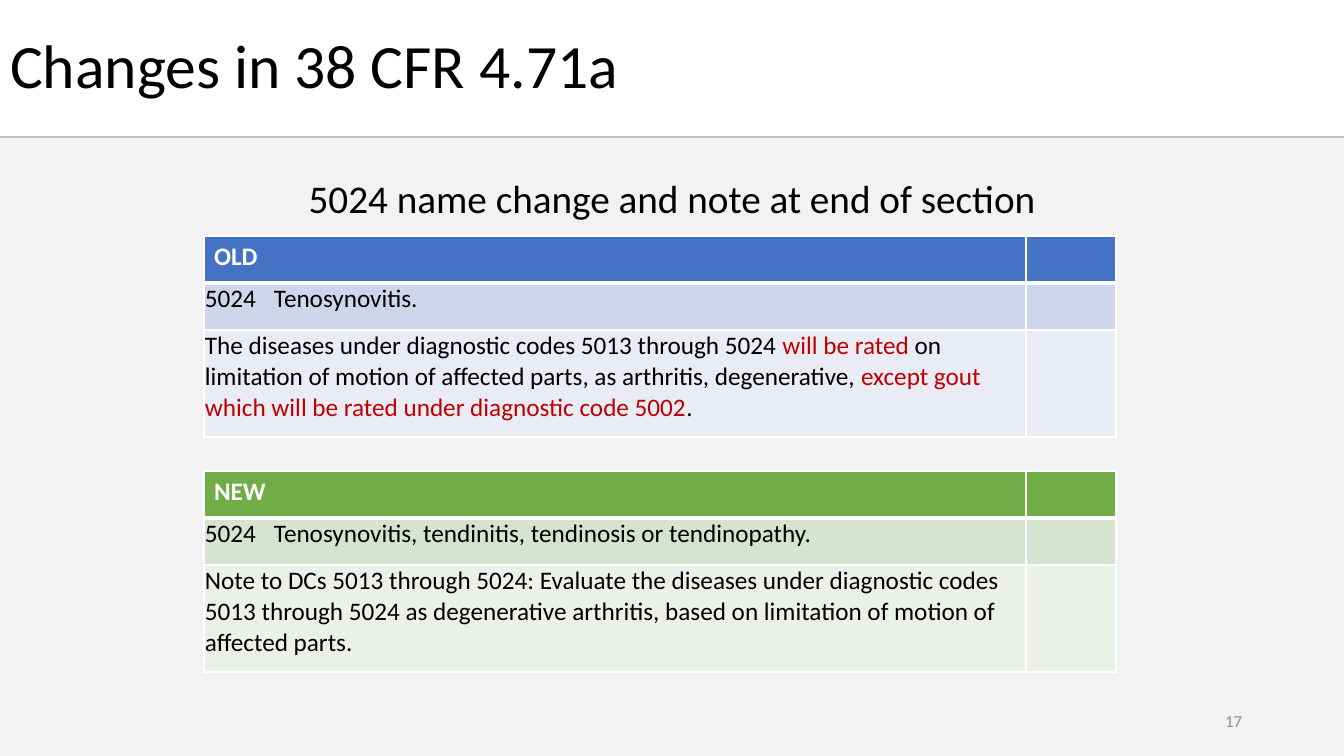
"""Build the slide on the 38 CFR 4.71a changes."""
from lxml import etree
from pptx import Presentation
from pptx import util as u
from pptx.dml.color import RGBColor
from pptx.enum import shapes, text
from pptx.oxml.ns import qn

FONT = "Calibri"
HUES = {
    "black": "000000", "white": "FFFFFF", "red": "C00000",
    "page": "F2F2F2", "rule": "BFBFBF", "grey": "8C8C8C",
    "blue": "4472C4", "blue mid": "CFD5EA", "blue pale": "E9EBF5",
    "green": "70AD47", "green mid": "D5E3CF", "green pale": "EBF1E9",
}
TITLE = "Changes in 38 CFR 4.71a"
LEAD = "5024 name change and note at end of section"
NUMBER = "17"
TABLES = [
    (236, ("blue", "blue mid", "blue pale"), [
        [("OLD", "white")],
        [("5024\tTenosynovitis.", "black")],
        [("The diseases under diagnostic codes 5013 through 5024 ", "black"),
         ("will be rated ", "red"),
         ("on limitation of motion of affected parts, as arthritis, degenerative,", "black"),
         (" except gout which will be rated under diagnostic code 5002", "red"),
         (".", "black")],
    ]),
    (471, ("green", "green mid", "green pale"), [
        [("NEW", "white")],
        [("5024\tTenosynovitis, tendinitis, tendinosis or tendinopathy.", "black")],
        [("Note to DCs 5013 through 5024: Evaluate the diseases under diagnostic codes "
          "5013 through 5024 as degenerative arthritis, based on limitation of motion "
          "of affected parts.", "black")],
    ]),
]
WIDE, HIGH = 1344, 756
LEFT, COLS, ROWS = 204, (822, 90), (47, 47, 107)
SPLIT, TAB = 137, 69


def px(n):
    return round(n * 12192000 / WIDE)


def box(*sides):
    return [px(n) for n in sides]


def hue(name):
    return RGBColor.from_string(HUES[name])


def write(para, runs, size, bold=False):
    for words, name in runs:
        run = para.add_run()
        run.text = words
        font = run.font
        font.name, font.size, font.bold = FONT, u.Pt(size), bold
        font.color.rgb = hue(name)


def label(slide, sides, words, name, size, align, anchor):
    frame = slide.shapes.add_textbox(*box(*sides)).text_frame
    frame.word_wrap = True
    frame.vertical_anchor = anchor
    frame.paragraphs[0].alignment = align
    write(frame.paragraphs[0], [(words, name)], size)


def edge(cell, head):
    props = cell._tc.get_or_add_tcPr()
    for side in "LRTB":
        width = 3 if head and side == "B" else 1
        line = etree.SubElement(props, qn("a:ln" + side), w=str(u.Pt(width)))
        fill = etree.SubElement(line, qn("a:solidFill"))
        etree.SubElement(fill, qn("a:srgbClr"), val=HUES["white"])


def grid(slide, top, fills, rows):
    frame = slide.shapes.add_table(
        len(ROWS), len(COLS), *box(LEFT, top, sum(COLS), sum(ROWS)))
    table = frame.table
    for col, wide in zip(table.columns, COLS):
        col.width = px(wide)
    for i, (high, fill, runs) in enumerate(zip(ROWS, fills, rows)):
        table.rows[i].height = px(high)
        for cell in table.rows[i].cells:
            edge(cell, i == 0)
            cell.fill.solid()
            cell.fill.fore_color.rgb = hue(fill)
        cell = table.cell(i, 0)
        para = cell.text_frame.paragraphs[0]
        if i:
            cell.margin_left = cell.margin_right = px(1)
            cell.margin_top = cell.margin_bottom = px(1)
        if i == 1:
            tabs = etree.SubElement(para._p.get_or_add_pPr(), qn("a:tabLst"))
            etree.SubElement(tabs, qn("a:tab"), pos=str(px(TAB)), algn="l")
        write(para, runs, 18, i == 0)


def main():
    deck = Presentation()
    deck.slide_width, deck.slide_height = box(WIDE, HIGH)
    slide = deck.slides.add_slide(deck.slide_layouts[5])

    page = slide.shapes.add_shape(
        shapes.MSO_SHAPE.RECTANGLE, *box(0, SPLIT, WIDE, HIGH - SPLIT))
    page.shadow.inherit = False
    page.fill.solid()
    page.fill.fore_color.rgb = hue("page")
    page.line.fill.background()

    rule = slide.shapes.add_connector(
        shapes.MSO_CONNECTOR.STRAIGHT, *box(0, SPLIT, WIDE, SPLIT))
    rule.line.color.rgb = hue("rule")
    rule.line.width = u.Pt(1.5)
    etree.SubElement(rule._element.spPr, qn("a:effectLst"))

    title = slide.shapes.title
    title.left, title.top, title.width, title.height = box(0, 15, 890, 108)
    frame = title.text_frame
    frame.auto_size = text.MSO_AUTO_SIZE.NONE
    frame.vertical_anchor = text.MSO_ANCHOR.MIDDLE
    para = frame.paragraphs[0]
    para.alignment = text.PP_ALIGN.LEFT
    para.line_spacing = 0.9
    write(para, [(TITLE, "black")], 44)

    for top, fills, rows in TABLES:
        grid(slide, top, fills, rows)
    label(slide, (68, 169, 1208, 58), LEAD, "black", 28,
          text.PP_ALIGN.CENTER, text.MSO_ANCHOR.TOP)
    label(slide, (950, 701, 302, 40), NUMBER, "grey", 12,
          text.PP_ALIGN.RIGHT, text.MSO_ANCHOR.MIDDLE)
    deck.save("out.pptx")


if __name__ == "__main__":
    main()
